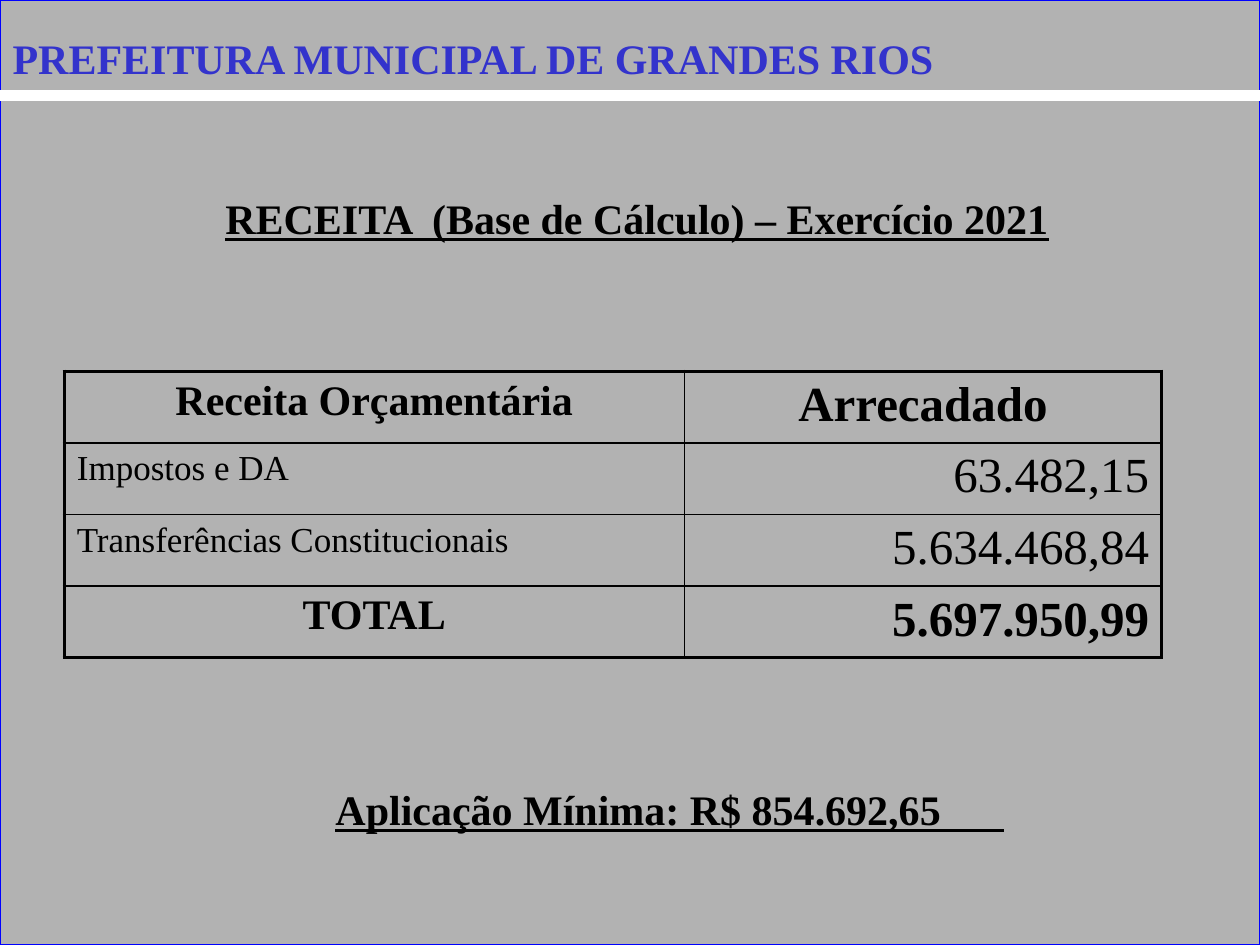
"""Build the municipal revenue slide: heading, revenue table and minimum amount."""
from dataclasses import dataclass

from lxml.etree import SubElement
from pptx import Presentation
from pptx.dml.color import RGBColor
from pptx.enum.shapes import MSO_CONNECTOR as Conn, MSO_SHAPE as Shape
from pptx.enum.text import MSO_ANCHOR as Anchor, MSO_AUTO_SIZE as Auto, PP_ALIGN as Al
from pptx.oxml import parse_xml
from pptx.oxml.ns import nsdecls, qn
from pptx.util import Inches, Pt

WIDTH, HEIGHT = Inches(10), Inches(7.5)
FONT = "Times New Roman"
THICK, THIN = 2.25, 1


@dataclass
class Box:
    """Place of an object in shares of the slide's size."""
    x: float
    y: float
    w: float
    h: float

    def emu(self) -> tuple[int, int, int, int]:
        """Return left, top, width and height as lengths."""
        return (round(self.x * WIDTH), round(self.y * HEIGHT),
                round(self.w * WIDTH), round(self.h * HEIGHT))


@dataclass
class Text:
    """One line of text and its format."""
    words: str
    size: int = 24
    align: Al = Al.CENTER
    bold: bool = True
    underline: bool = False
    color: str = "000000"


ROWS = [
    (Text("Receita Orçamentária"), Text("Arrecadado", 28)),
    (Text("Impostos e DA", 20, Al.LEFT, False), Text("63.482,15", 28, Al.RIGHT, False)),
    (Text("Transferências Constitucionais", 20, Al.LEFT, False),
     Text("5.634.468,84", 28, Al.RIGHT, False)),
    (Text("TOTAL"), Text("5.697.950,99", 28, Al.RIGHT)),
]
COLUMN_SHARES = (0.565, 0.435)


def rgb(code: str) -> RGBColor:
    """Turn a hex string into a colour."""
    return RGBColor.from_string(code)


def write(tf, text: Text):
    """Write one formatted line into a text frame and return its run."""
    p = tf.paragraphs[0]
    p.alignment = text.align
    r = p.add_run()
    r.text = text.words
    r.font.color.rgb = rgb(text.color)
    for name, value in {"name": FONT, "size": Pt(text.size), "bold": text.bold,
                        "underline": text.underline}.items():
        setattr(r.font, name, value)
    return r


def frame(tf, anchor: Anchor) -> None:
    """Set wrapping, anchor and sizing of a text frame."""
    for name, value in {"word_wrap": True, "vertical_anchor": anchor,
                        "auto_size": Auto.NONE}.items():
        setattr(tf, name, value)


def add_text(s, box: Box, text: Text, anchor: Anchor) -> None:
    """Add a text box with one line."""
    tf = s.shapes.add_textbox(*box.emu()).text_frame
    frame(tf, anchor)
    write(tf, text)


def add_background(s) -> None:
    """Draw the grey panel and the white rule below the heading."""
    sp = s.shapes.add_shape(Shape.RECTANGLE, 0, 0, WIDTH, HEIGHT)
    sp.shadow.inherit = False
    sp.fill.solid()
    sp.fill.fore_color.rgb = rgb("B2B2B2")
    sp.line.color.rgb = rgb("0000FF")
    sp.line.width = Pt(0.75)
    y = Inches(0.76)
    rule = s.shapes.add_connector(Conn.STRAIGHT, 0, y, WIDTH, y)
    rule.line.color.rgb = rgb("FFFFFF")
    rule.line.width = Pt(6)
    SubElement(rule._element.spPr, qn("a:effectLst"))


def set_title(s, box: Box, text: Text) -> None:
    """Format the title placeholder, with a text shadow, in front of the panel."""
    title = s.shapes.title
    title.left, title.top, title.width, title.height = box.emu()
    frame(title.text_frame, Anchor.TOP)
    r = write(title.text_frame, text)
    shadow = parse_xml(
        f'<a:effectLst {nsdecls("a")}><a:outerShdw dist="35921" dir="2700000">'
        '<a:srgbClr val="808080"/></a:outerShdw></a:effectLst>')
    r.font._element.find(qn("a:solidFill")).addnext(shadow)
    s.shapes._spTree.append(title._element)


def set_borders(cell, widths: dict[str, float]) -> None:
    """Give a cell black borders of the given widths, before its fill."""
    pr = cell._tc.get_or_add_tcPr()
    for i, (side, width) in enumerate(widths.items()):
        pr.insert(i, parse_xml(
            f'<a:ln{side} {nsdecls("a")} w="{Pt(width)}"><a:solidFill>'
            f'<a:srgbClr val="000000"/></a:solidFill></a:ln{side}>'))


def add_revenue_table(s, box: Box) -> None:
    """Add the revenue table with a thick outer frame and thin inner lines."""
    last_row, last_col = len(ROWS) - 1, len(COLUMN_SHARES) - 1
    x, y, w, h = box.emu()
    table = s.shapes.add_table(len(ROWS), len(COLUMN_SHARES), x, y, w, h).table
    table.first_row = table.horz_banding = False
    for column, share in zip(table.columns, COLUMN_SHARES):
        column.width = round(w * share)
    for i, row in enumerate(ROWS):
        for j, text in enumerate(row):
            cell = table.cell(i, j)
            cell.fill.background()
            write(cell.text_frame, text)
            edges = {"L": j == 0, "R": j == last_col, "T": i == 0, "B": i == last_row}
            set_borders(cell, {k: THICK if outer else THIN for k, outer in edges.items()})


def main() -> None:
    """Build and save the slide."""
    prs = Presentation()
    prs.slide_width, prs.slide_height = WIDTH, HEIGHT
    s = prs.slides.add_slide(prs.slide_layouts[5])
    add_background(s)
    add_text(s, Box(0.098, 0.116, 0.815, 0.148),
             Text("RECEITA  (Base de Cálculo) – Exercício 2021", underline=True),
             Anchor.BOTTOM)
    add_revenue_table(s, Box(0.051, 0.393, 0.871, 0.303))
    set_title(s, Box(0, 0.028, 0.823, 0.067),
              Text("PREFEITURA MUNICIPAL DE GRANDES RIOS", align=Al.LEFT, color="3333CC"))
    add_text(s, Box(0.256, 0.823, 0.551, 0.067),
             Text("Aplicação Mínima: R$ 854.692,65       ", underline=True), Anchor.TOP)
    prs.save("out.pptx")


if __name__ == "__main__":
    main()
